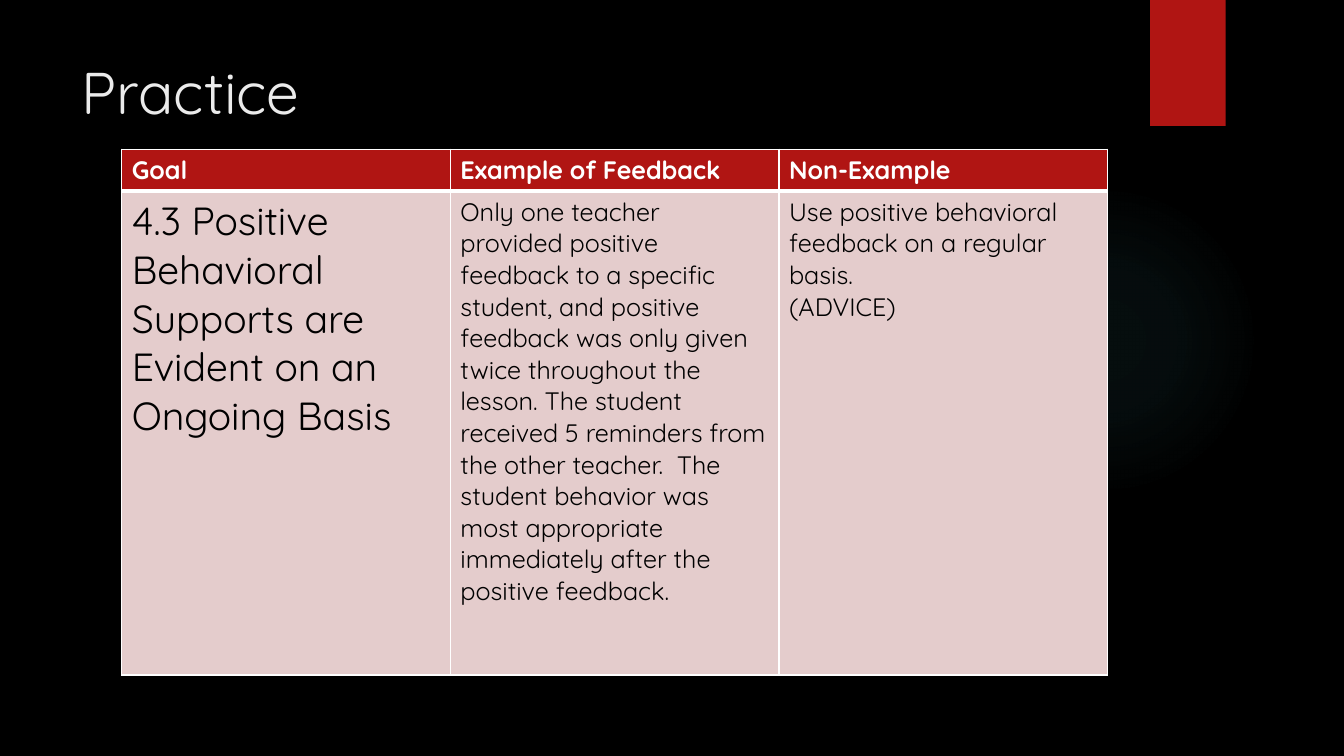
from dataclasses import dataclass

from lxml.etree import SubElement
from pptx import Presentation
from pptx.dml.color import RGBColor
from pptx.enum.shapes import MSO_SHAPE
from pptx.enum.text import MSO_ANCHOR, MSO_AUTO_SIZE, PP_ALIGN
from pptx.oxml import parse_xml
from pptx.oxml.ns import nsdecls, qn
from pptx.shapes.autoshape import Shape
from pptx.slide import Slide
from pptx.table import _Cell
from pptx.text.text import TextFrame
from pptx.util import Pt

COLORS = {
    "background": "000000",
    "title": "EBEBEB",
    "accent": "B01513",
    "glow": "50B9C1",
    "body_fill": "E4CCCC",
    "body_text": "000000",
    "header_text": "FFFFFF",
    "border": "FFFFFF",
}
FONT = "Quicksand"
GLOW_STOPS = ((0, 7), (36, 6), (69, 0))
COLUMN_WIDTH = 234.72


@dataclass(frozen=True)
class RowStyle:
    height: float
    fill: str
    text: str
    bold: bool
    borders: dict[str, float]


@dataclass(frozen=True)
class Entry:
    text: str
    size: float = 18


@dataclass(frozen=True)
class Decoration:
    outline: MSO_SHAPE
    left: float
    top: float
    width: float
    height: float


HEADER = RowStyle(30, "accent", "header_text", True, {"lnL": 1, "lnR": 1, "lnT": 1, "lnB": 3})
BODY = RowStyle(345.7, "body_fill", "body_text", False, {"lnL": 1, "lnR": 1, "lnT": 3, "lnB": 1})

FEEDBACK_ROWS = (
    (HEADER, (Entry("Goal"), Entry("Example of Feedback"), Entry("Non-Example"))),
    (BODY, (
        Entry("4.3 Positive Behavioral Supports are Evident on an Ongoing Basis", 28),
        Entry(
            "Only one teacher provided positive feedback to a specific student, "
            "and positive feedback was only given twice throughout the lesson. "
            "The student received 5 reminders from the other teacher.  "
            "The student behavior was most appropriate immediately after the "
            "positive feedback."
        ),
        Entry("Use positive behavioral feedback on a regular basis.\n(ADVICE)"),
    )),
)

GLOW = Decoration(MSO_SHAPE.OVAL, 677.5, 131.8, 221.8, 221.8)
RIBBON = Decoration(MSO_SHAPE.RECTANGLE, 821.5, 0, 54, 90)


def color(name: str) -> RGBColor:
    return RGBColor.from_string(COLORS[name])


def format_text(frame: TextFrame, size: float, color_name: str, bold: bool = False) -> None:
    for paragraph in frame.paragraphs:
        paragraph.alignment = PP_ALIGN.LEFT
        for run in paragraph.runs:
            run.font.name = FONT
            run.font.size = Pt(size)
            run.font.bold = bold
            run.font.color.rgb = color(color_name)


def add_decoration(slide: Slide, decoration: Decoration) -> Shape:
    shape = slide.shapes.add_shape(
        decoration.outline, Pt(decoration.left), Pt(decoration.top),
        Pt(decoration.width), Pt(decoration.height),
    )
    shape.shadow.inherit = False
    shape.line.fill.background()
    shape.fill.solid()
    shape.fill.fore_color.rgb = color("accent")
    return shape


def apply_glow(shape: Shape) -> None:
    stops = "".join(
        f'<a:gs pos="{position * 1000}"><a:srgbClr val="{COLORS["glow"]}">'
        f'<a:alpha val="{opacity * 1000}"/></a:srgbClr></a:gs>'
        for position, opacity in GLOW_STOPS
    )
    gradient = parse_xml(
        f'<a:gradFill {nsdecls("a")}><a:gsLst>{stops}</a:gsLst><a:path path="circle">'
        '<a:fillToRect l="50000" t="50000" r="50000" b="50000"/></a:path></a:gradFill>'
    )
    properties = shape.element.spPr
    properties.replace(properties.find(qn("a:solidFill")), gradient)


def fill_cell(cell: _Cell, entry: Entry, style: RowStyle) -> None:
    properties = cell._tc.get_or_add_tcPr()
    for side, width in style.borders.items():
        border = SubElement(properties, qn(f"a:{side}"), w=str(Pt(width)))
        border_fill = SubElement(border, qn("a:solidFill"))
        SubElement(border_fill, qn("a:srgbClr"), val=COLORS["border"])
    cell.fill.solid()
    cell.fill.fore_color.rgb = color(style.fill)
    cell.text_frame.text = entry.text
    format_text(cell.text_frame, entry.size, style.text, style.bold)


def add_feedback(slide: Slide) -> None:
    column_count = len(FEEDBACK_ROWS[0][1])
    total_height = sum(style.height for style, _ in FEEDBACK_ROWS)
    feedback = slide.shapes.add_table(
        len(FEEDBACK_ROWS), column_count, Pt(87), Pt(106.5),
        Pt(COLUMN_WIDTH * column_count), Pt(total_height),
    ).table
    feedback.horz_banding = False
    for column in feedback.columns:
        column.width = Pt(COLUMN_WIDTH)
    for row, (style, entries) in zip(feedback.rows, FEEDBACK_ROWS):
        row.height = Pt(style.height)
        for cell, entry in zip(row.cells, entries):
            fill_cell(cell, entry, style)


def add_title(slide: Slide) -> None:
    title = slide.shapes.title
    title.left, title.top, title.width, title.height = Pt(51), Pt(36), Pt(741), Pt(110)
    title.text_frame.text = "Practice"
    title.text_frame.word_wrap = True
    title.text_frame.auto_size = MSO_AUTO_SIZE.NONE
    title.text_frame.vertical_anchor = MSO_ANCHOR.TOP
    format_text(title.text_frame, 42, "title")


def main() -> None:
    presentation = Presentation()
    presentation.slide_width, presentation.slide_height = Pt(960), Pt(540)
    slide = presentation.slides.add_slide(presentation.slide_layouts[5])
    slide.background.fill.solid()
    slide.background.fill.fore_color.rgb = color("background")
    apply_glow(add_decoration(slide, GLOW))
    add_decoration(slide, RIBBON)
    add_title(slide)
    add_feedback(slide)
    presentation.save("out.pptx")


if __name__ == "__main__":
    main()
